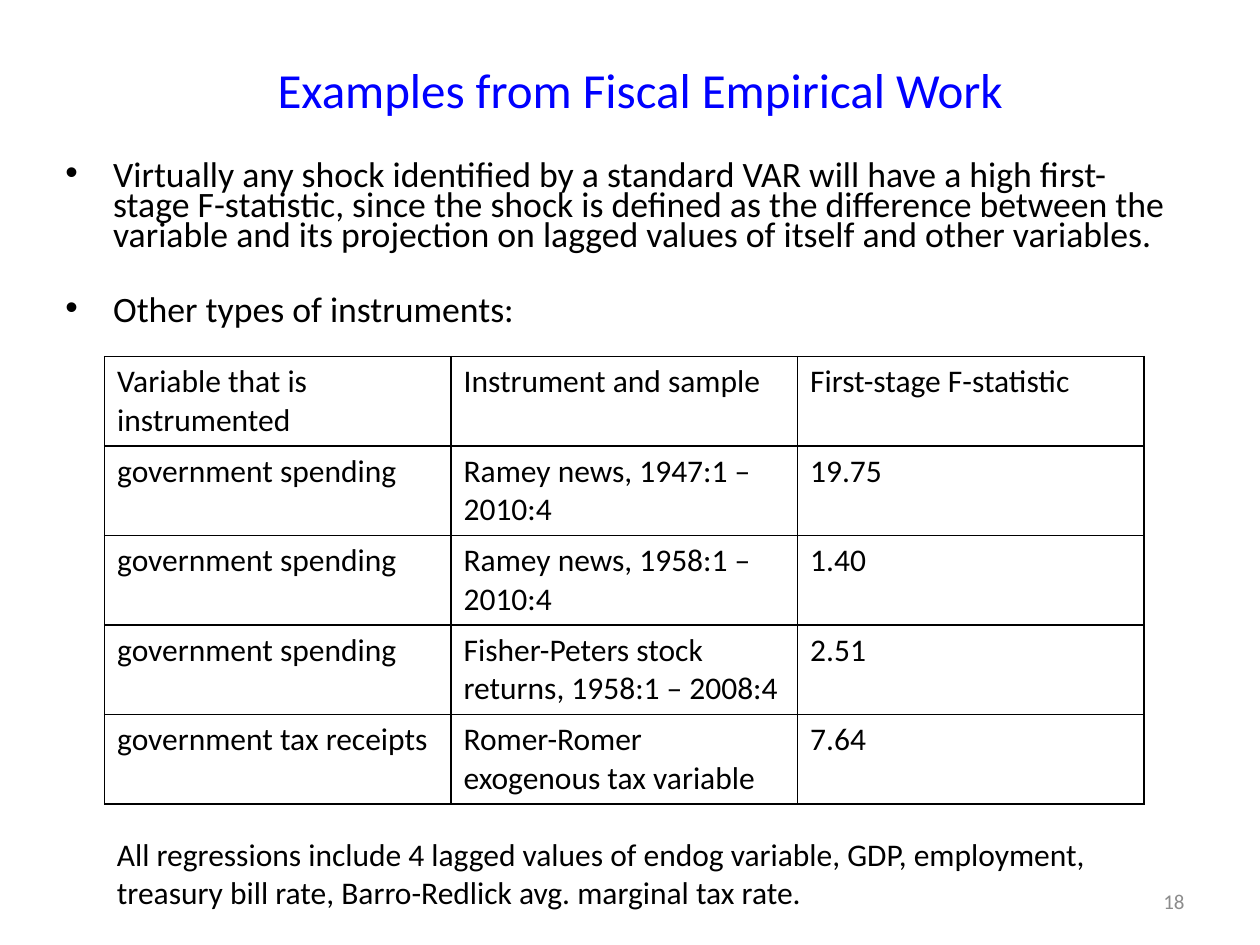
from lxml.etree import SubElement
from pptx import Presentation
from pptx.dml.color import RGBColor
from pptx.enum.text import MSO_ANCHOR, PP_ALIGN
from pptx.oxml.ns import qn
from pptx.util import Inches, Pt

TITLE = "Examples from Fiscal Empirical Work"
BULLETS = [
    "Virtually any shock identified by a standard VAR will have a high first-stage "
    "F-statistic, since the shock is defined as the difference between the variable "
    "and its projection on lagged values of itself and other variables.",
    "Other types of instruments:",
]
ROWS = [
    ("Variable that is instrumented", "Instrument and sample", "First-stage F-statistic"),
    ("government spending", "Ramey news, 1947:1 – 2010:4", "19.75"),
    ("government spending", "Ramey news, 1958:1 – 2010:4", "1.40"),
    ("government spending", "Fisher-Peters stock returns, 1958:1 – 2008:4", "2.51"),
    ("government tax receipts", "Romer-Romer exogenous tax variable", "7.64"),
]
NOTE = ("All regressions include 4 lagged values of endog variable, GDP, employment, "
        "treasury bill rate, Barro-Redlick avg. marginal tax rate.")
PAGE_NUMBER = "18"

COLUMN_WIDTH, ROW_HEIGHT = 2.75, 0.71
TABLE_LEFT, TABLE_TOP = 0.83, 2.83
BULLET_INDENT = 0.38
BULLET_GAPS = (4, 25.5)


def color(value):
    return RGBColor.from_string(value)


def write(para, text, size, ink="000000", **layout):
    for name, value in layout.items():
        setattr(para, name, value)
    span = para.add_run()
    span.text = text
    for name, value in {"name": "Calibri", "size": Pt(size), "bold": False}.items():
        setattr(span.font, name, value)
    span.font.color.rgb = color(ink)


def add_box(page, left, top, width, height, anchor=MSO_ANCHOR.TOP):
    box = page.shapes.add_textbox(*map(Inches, (left, top, width, height)))
    box.text_frame.word_wrap = True
    box.text_frame.vertical_anchor = anchor
    return box.text_frame


def add_bullet(para):
    properties = para._p.get_or_add_pPr()
    properties.set("marL", str(Inches(BULLET_INDENT)))
    properties.set("indent", str(-Inches(BULLET_INDENT)))
    SubElement(properties, qn("a:buFont"), typeface="Arial")
    SubElement(properties, qn("a:buChar"), char="•")


def add_borders(cell, ink="000000", width=1):
    properties = cell._tc.get_or_add_tcPr()
    for position, side in enumerate(("lnL", "lnR", "lnT", "lnB")):
        line = SubElement(properties, qn(f"a:{side}"), w=str(Pt(width)))
        fill = SubElement(line, qn("a:solidFill"))
        SubElement(fill, qn("a:srgbClr"), val=ink)
        properties.insert(position, line)


def main():
    deck = Presentation()
    deck.slide_width, deck.slide_height = Inches(10), Inches(7.5)
    page = deck.slides.add_slide(deck.slide_layouts[6])

    # Title
    frame = add_box(page, 0.58, 0.33, 9, 0.75, MSO_ANCHOR.MIDDLE)
    write(frame.paragraphs[0], TITLE, 28, "0000FF", alignment=PP_ALIGN.CENTER)

    # Bullets
    frame = add_box(page, 0.42, 1.25, 9, 1.42)
    for index, (text, gap) in enumerate(zip(BULLETS, BULLET_GAPS)):
        para = frame.add_paragraph() if index else frame.paragraphs[0]
        write(para, text, 20.4, line_spacing=0.7, space_before=Pt(gap))
        add_bullet(para)

    # Table of instruments
    columns = len(ROWS[0])
    table = page.shapes.add_table(
        len(ROWS), columns, Inches(TABLE_LEFT), Inches(TABLE_TOP),
        Inches(COLUMN_WIDTH * columns), Inches(ROW_HEIGHT * len(ROWS))).table
    table.first_row = table.horz_banding = False
    for row, texts in enumerate(ROWS):
        for column, text in enumerate(texts):
            cell = table.cell(row, column)
            cell.fill.background()
            write(cell.text_frame.paragraphs[0], text, 18)
            add_borders(cell)

    # Note and page number
    frame = add_box(page, TABLE_LEFT, 6.58, 8.42, 0.71)
    write(frame.paragraphs[0], NOTE, 18)
    frame = add_box(page, 7.17, 6.95, 2.33, 0.4, MSO_ANCHOR.MIDDLE)
    write(frame.paragraphs[0], PAGE_NUMBER, 12, "8C8C8C", alignment=PP_ALIGN.RIGHT)

    deck.save("out.pptx")


if __name__ == "__main__":
    main()
